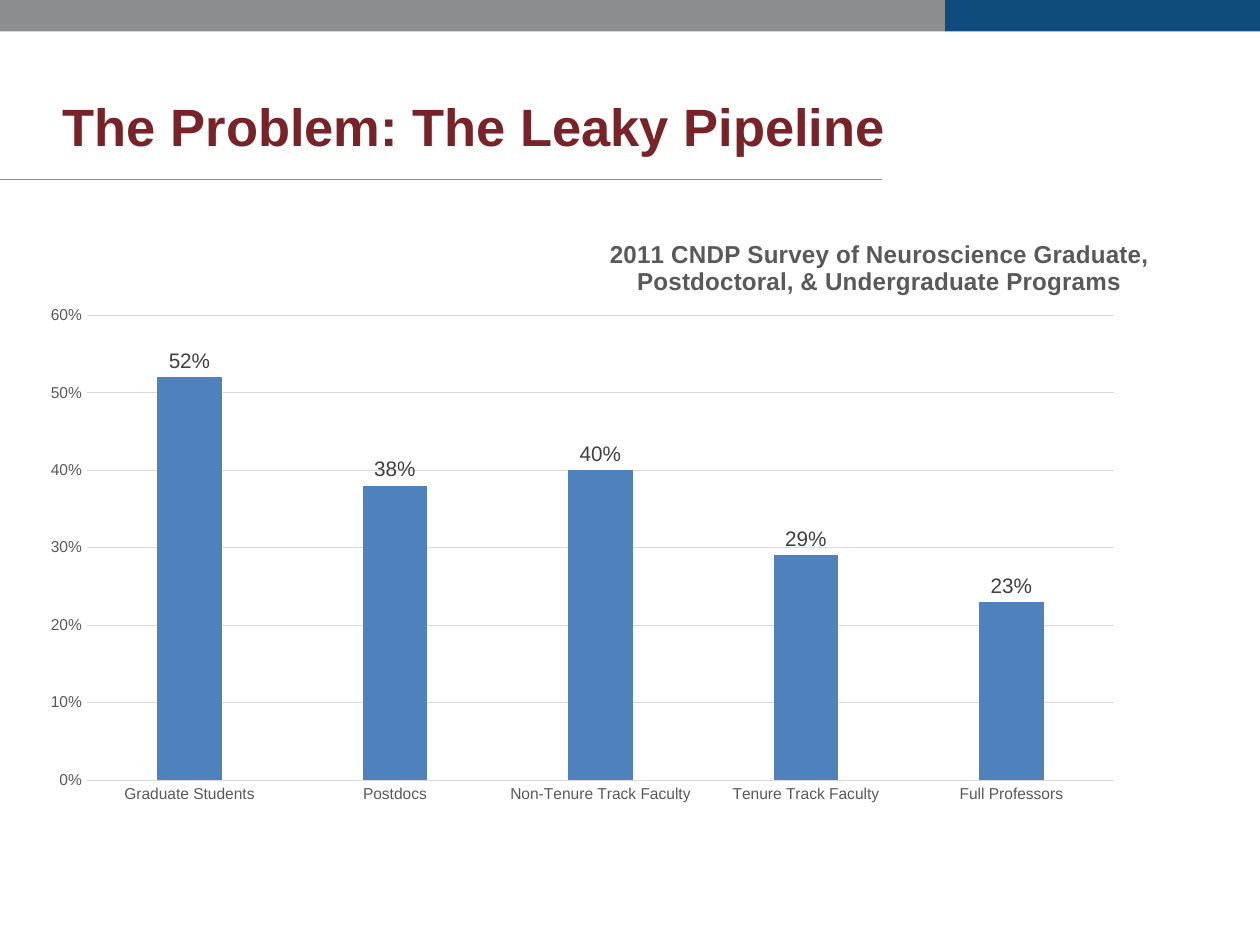
import pptx
import pptx.util
import pptx.chart.data
import pptx.dml.color
import pptx.enum.chart
import pptx.enum.shapes
import pptx.enum.text
import pptx.oxml
import pptx.oxml.ns

WIDE, HIGH = 10, 7.5
FACE = "Arial"
HUES = {"gray": "8C8D8E", "navy": "104B7D", "wine": "782327", "bar": "4F81BD",
        "grid": "D9D9D9", "axis": "595959", "label": "404040"}
RATES = {"Graduate Students": 0.52, "Postdocs": 0.38,
         "Non-Tenure Track Faculty": 0.4, "Tenure Track Faculty": 0.29,
         "Full Professors": 0.23}
HEAD = ["2011 CNDP Survey of Neuroscience Graduate,",
        "Postdoctoral, & Undergraduate Programs"]


def hue(name):
    return pptx.dml.color.RGBColor.from_string(HUES[name])


def inch(box):
    return [pptx.util.Inches(n) for n in box]


def style(font, size, name, bold=False):
    font.name, font.size, font.bold = FACE, pptx.util.Pt(size), bold
    font.color.rgb = hue(name)


def rule(line, name):
    line.color.rgb = hue(name)
    line.width = pptx.util.Pt(0.75)


def band(slide, box):
    left, top, wide, high = box
    split = wide * 0.75
    for name, x, w in (("navy", left + split, wide - split), ("gray", left, split)):
        bar = slide.shapes.add_shape(pptx.enum.shapes.MSO_SHAPE.RECTANGLE,
                                     *inch((x, top, w, high)))
        bar.shadow.inherit = False
        bar.fill.solid()
        bar.fill.fore_color.rgb = hue(name)
        bar.line.fill.background()


def title(slide, box, text):
    frame = slide.shapes.add_textbox(*inch(box)).text_frame
    frame.word_wrap = True
    frame.margin_left = frame.margin_right = 0
    frame.margin_top = frame.margin_bottom = 0
    frame.vertical_anchor = pptx.enum.text.MSO_ANCHOR.MIDDLE
    frame.text = text
    style(frame.paragraphs[0].font, 30, "wine", True)


def under(slide, box):
    left, top, wide, high = box
    line = slide.shapes.add_connector(
        pptx.enum.shapes.MSO_CONNECTOR.STRAIGHT,
        *inch((left, top, left + wide, top + high)))
    rule(line.line, "gray")
    props = line._element.spPr
    props.append(props.makeelement(pptx.oxml.ns.qn("a:effectLst"), {}))


def layout(**marks):
    inner = "".join(f'<c:{key} val="{val}"/>' for key, val in marks.items())
    return pptx.oxml.parse_xml(
        f'<c:layout {pptx.oxml.ns.nsdecls("c")}>'
        f'<c:manualLayout>{inner}</c:manualLayout></c:layout>')


def place(node, new, after=None):
    for old in node.findall(pptx.oxml.ns.qn("c:layout")):
        node.remove(old)
    if after is None:
        node.insert(0, new)
    else:
        after.addnext(new)


def graph(slide, box):
    data = pptx.chart.data.CategoryChartData(number_format="0%")
    data.categories = list(RATES)
    data.add_series("Series 1", list(RATES.values()))
    chart = slide.shapes.add_chart(
        pptx.enum.chart.XL_CHART_TYPE.COLUMN_CLUSTERED, *inch(box), data).chart
    chart.has_legend = False
    style(chart.font, 10, "axis")
    heading(chart)
    axes(chart)
    bars(chart)
    area = chart._chartSpace.chart.plotArea
    place(area, layout(layoutTarget="inner", xMode="edge", yMode="edge",
                       x=0.05, y=0.17, w=0.93, h=0.75))


def heading(chart):
    chart.has_title = True
    head = chart.chart_title
    head.include_in_layout = False
    frame = head.text_frame
    frame.text = "\n".join(HEAD)
    for para in frame.paragraphs:
        para.alignment = pptx.enum.text.PP_ALIGN.CENTER
        style(para.font, 14, "axis", True)
    node = head._element
    place(node, layout(xMode="edge", yMode="edge", x=0.52, y=0.04),
          node.find(pptx.oxml.ns.qn("c:tx")))


def axes(chart):
    none = pptx.enum.chart.XL_TICK_MARK.NONE
    for axis in (chart.category_axis, chart.value_axis):
        axis.major_tick_mark = axis.minor_tick_mark = none
        style(axis.tick_labels.font, 9, "axis")
    rule(chart.category_axis.format.line, "grid")
    rates = chart.value_axis
    rates.minimum_scale, rates.maximum_scale, rates.major_unit = 0, 0.6, 0.1
    rates.format.line.fill.background()
    rates.has_major_gridlines = True
    rule(rates.major_gridlines.format.line, "grid")
    rates.tick_labels.number_format = "0%"
    rates.tick_labels.number_format_is_linked = False


def bars(chart):
    plot = chart.plots[0]
    plot.vary_by_categories = False
    plot.gap_width, plot.overlap = 219, -27
    row = plot.series[0]
    row.format.fill.solid()
    row.format.fill.fore_color.rgb = hue("bar")
    tags = row.data_labels
    tags.show_value = True
    tags.number_format, tags.number_format_is_linked = "0%", False
    tags.position = pptx.enum.chart.XL_LABEL_POSITION.OUTSIDE_END
    style(tags.font, 12, "label")


def main():
    deck = pptx.Presentation()
    deck.slide_width, deck.slide_height = inch((WIDE, HIGH))
    slide = deck.slides.add_slide(deck.slide_layouts[6])
    under(slide, (0, HIGH * 0.19, WIDE * 0.7, 0))
    band(slide, (0, 0, WIDE, HIGH / 30))
    title(slide, (WIDE * 0.05, HIGH * 0.1, WIDE * 0.85, HIGH / 15),
          "The Problem: The Leaky Pipeline")
    graph(slide, (WIDE / 40, HIGH * 2 / 9, WIDE * 0.89, HIGH * 0.656))
    deck.save("out.pptx")


if __name__ == "__main__":
    main()
